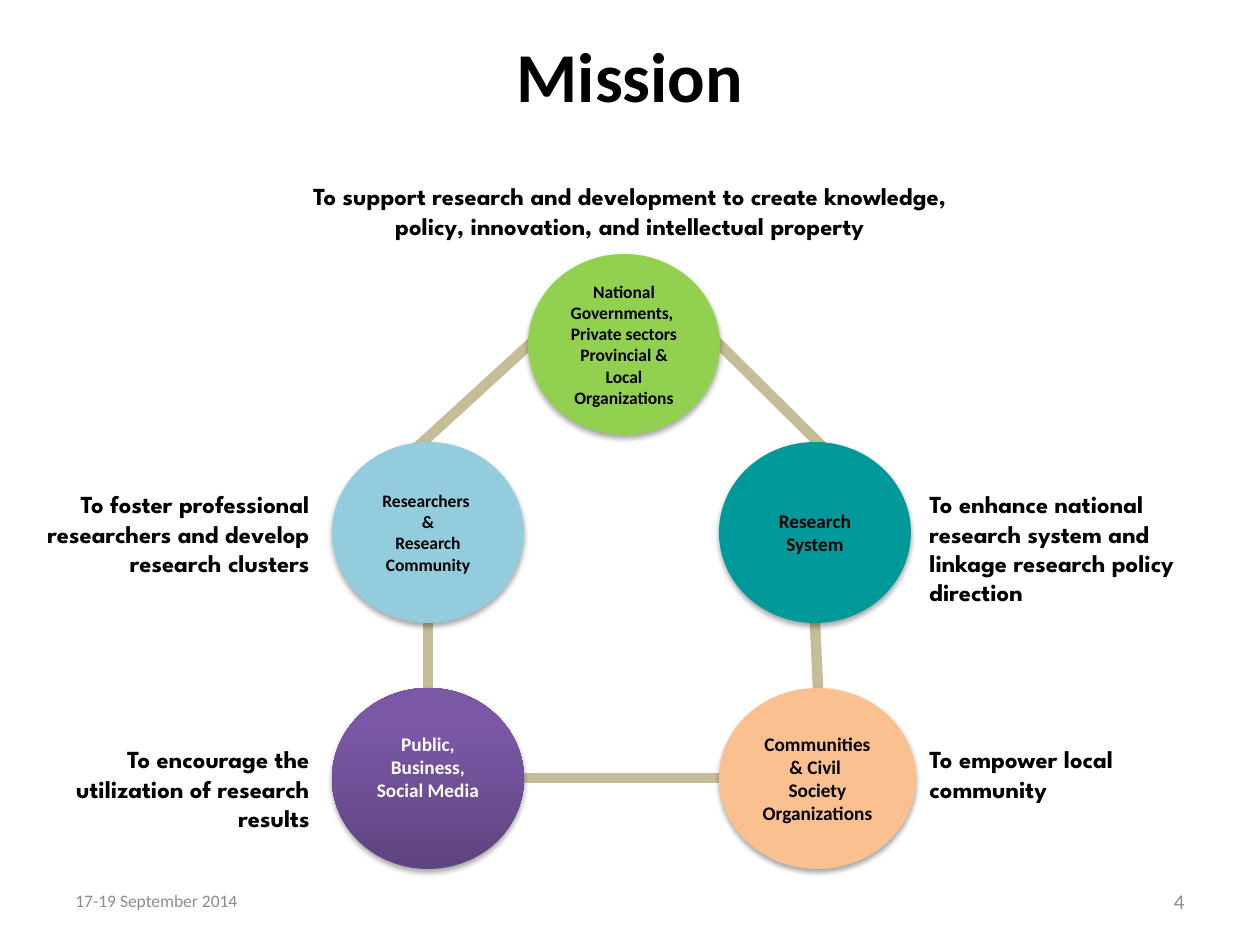
from lxml import etree
from pptx import Presentation
from pptx import util as u
from pptx.dml.color import RGBColor
from pptx.enum import shapes, text
from pptx.oxml.ns import qn

EMU_PER_PX = 914400 / 126
LEFT, CENTER, RIGHT = text.PP_ALIGN.LEFT, text.PP_ALIGN.CENTER, text.PP_ALIGN.RIGHT


def px(n):
    return u.Emu(round(n * EMU_PER_PX))


def color(value):
    return RGBColor.from_string(value)


class MissionSlide:
    BODY, CAPTION = "Calibri", "League Spartan"
    BLACK, GREY, LINK = "000000", "8C8C8C", "C4BD97"

    def __init__(self, prs):
        self.slide = prs.slides.add_slide(prs.slide_layouts[5])

    def place(self, shape, left, top, width, height):
        shape.left, shape.top = px(left), px(top)
        shape.width, shape.height = px(width), px(height)

    def set_words(self, shape, words, size, hue, align, font=BODY, bold=True,
                  anchor=text.MSO_ANCHOR.MIDDLE):
        frame = shape.text_frame
        frame.word_wrap = True
        frame.vertical_anchor = anchor
        frame.text = words
        for paragraph in frame.paragraphs:
            paragraph.alignment = align
            paragraph.font.name = font
            paragraph.font.size = u.Pt(size)
            paragraph.font.bold = bold
            paragraph.font.color.rgb = color(hue)

    def title(self, words, *box):
        heading = self.slide.shapes.title
        self.place(heading, *box)
        self.set_words(heading, words, 40, self.BLACK, CENTER)

    def caption(self, words, align, *box):
        note = self.slide.shapes.add_textbox(*map(px, box))
        self.set_words(note, words, 14, self.BLACK, align, self.CAPTION,
                       anchor=text.MSO_ANCHOR.TOP)

    def footer(self, words, size, align, *box):
        note = self.slide.shapes.add_textbox(*map(px, box))
        self.set_words(note, words, size, self.GREY, align, bold=False)

    def link(self, *ends):
        line = self.slide.shapes.add_connector(
            shapes.MSO_CONNECTOR.STRAIGHT, *map(px, ends))
        line.line.color.rgb = color(self.LINK)
        line.line.width = u.Pt(6)
        etree.SubElement(line._element.spPr, qn("a:effectLst"))

    def circle(self, words, size, fill, hue, *box):
        disc = self.slide.shapes.add_shape(shapes.MSO_SHAPE.OVAL, *map(px, box))
        if isinstance(fill, str):
            disc.fill.solid()
            disc.fill.fore_color.rgb = color(fill)
        else:
            disc.fill.gradient()
            disc.fill.gradient_angle = 90
            for stop, (position, shade) in zip(disc.fill.gradient_stops, fill):
                stop.position = position
                stop.color.rgb = color(shade)
        disc.line.fill.background()
        self.soft_shadow(disc)
        self.set_words(disc, words, size, hue, CENTER)
        return disc

    def soft_shadow(self, shape):
        shape.shadow.inherit = False
        effects = shape._element.spPr.find(qn("a:effectLst"))
        shadow = etree.SubElement(effects, qn("a:outerShdw"), blurRad="40000",
                                  dist="23000", dir="5400000", rotWithShape="0")
        black = etree.SubElement(shadow, qn("a:srgbClr"), val=self.BLACK)
        etree.SubElement(black, qn("a:alpha"), val="35000")


def main():
    prs = Presentation()
    prs.slide_width, prs.slide_height = px(1260), px(945)
    mission = MissionSlide(prs)
    mission.title("Mission", 63, -4, 1134, 158)

    # Ring of partners: two columns, two rows and a circle on top
    west, east, upper, lower = 332, 719, 442, 688
    wide, high = 192, 181
    west_mid, lower_mid = west + wide // 2, lower + high // 2

    # Links behind the circles
    mission.link(709, 334, 828, 452)
    mission.link(412, 452, 541, 334)
    mission.link(815, upper + high, 818, lower)
    mission.link(west + wide, lower_mid, east, lower_mid)
    mission.link(west_mid, upper + high, west_mid, lower)

    # Partners
    black, white = "000000", "FFFFFF"
    purple = [(0, "5F4480"), (0.8, "7B58A6")]
    mission.circle("Researchers \n&\nResearch Community", 10, "93CDDD", black,
                   west, upper, wide, high)
    mission.circle("Research\nSystem", 11, "009999", black,
                   east, upper, wide, high)
    public = mission.circle("Public, Business, Social Media", 11, purple, white,
                            west, lower, wide, high)
    public.text_frame.margin_bottom = px(29)
    mission.circle("Communities\v& Civil \vSociety Organizations", 11, "FAC090",
                   black, east, lower, 197, high)
    mission.circle("National Governments, \nPrivate sectors\n"
                   "Provincial & Local Organizations", 10, "92D050", black,
                   528, 254, wide, high)

    # Aim beside each partner
    mission.caption("To support research and development to create knowledge, "
                    "policy, innovation, and intellectual property",
                    CENTER, 263, 175, 734, 72)
    side_aims = [
        ("To foster professional researchers and develop research clusters",
         RIGHT, 25, 483, 131),
        ("To encourage the utilization of research results",
         RIGHT, 25, 738, 102),
        ("To empower local community", LEFT, 917, 738, 72),
        ("To enhance national research system and linkage research policy "
         "direction", LEFT, 917, 483, 131),
    ]
    for words, align, left, top, height in side_aims:
        mission.caption(words, align, left, top, 297, height)

    # Date and page number
    mission.footer("17-19 September 2014", 10, LEFT, 63, 876, 294, 50)
    mission.footer("4", 12, RIGHT, 903, 876, 294, 50)

    prs.save("out.pptx")


if __name__ == "__main__":
    main()
